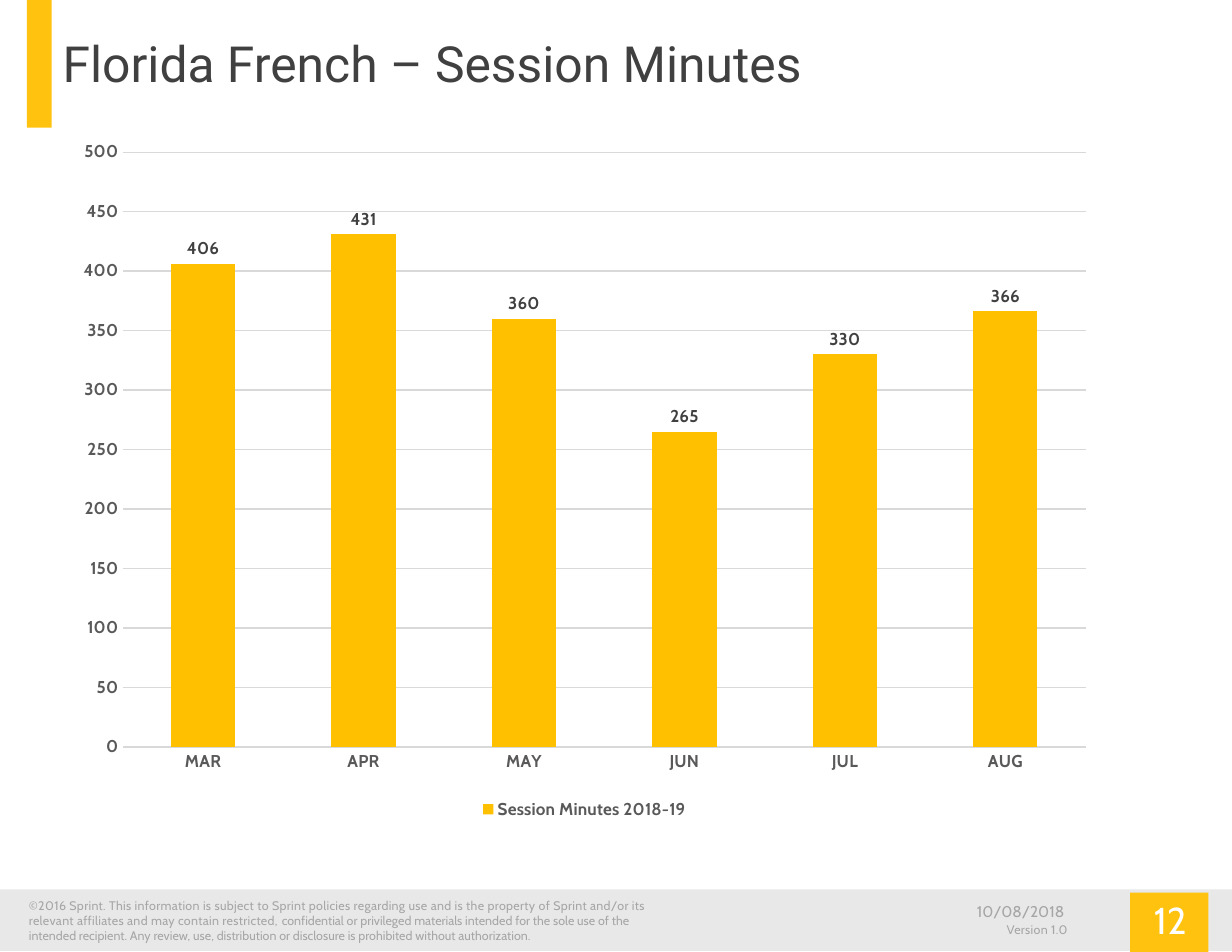
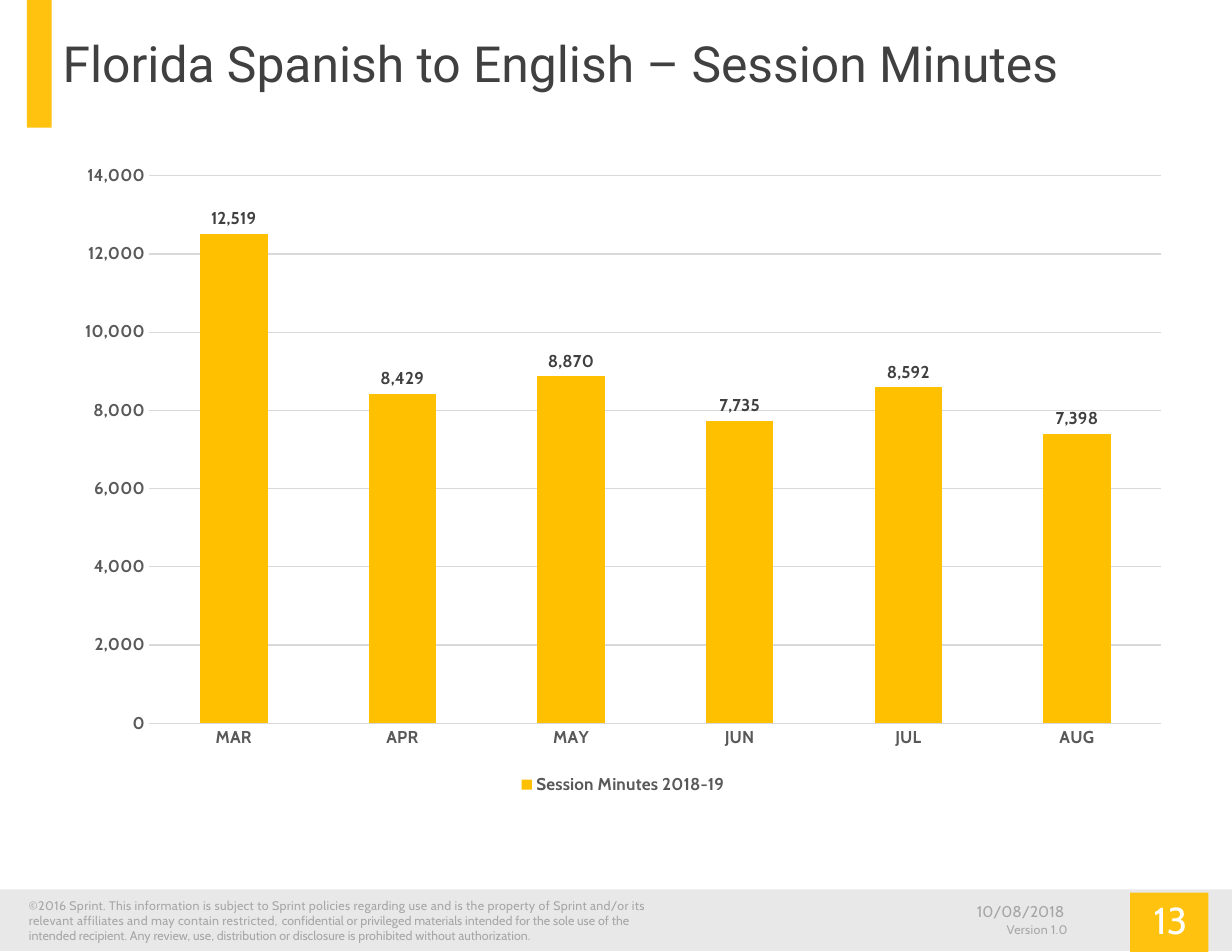
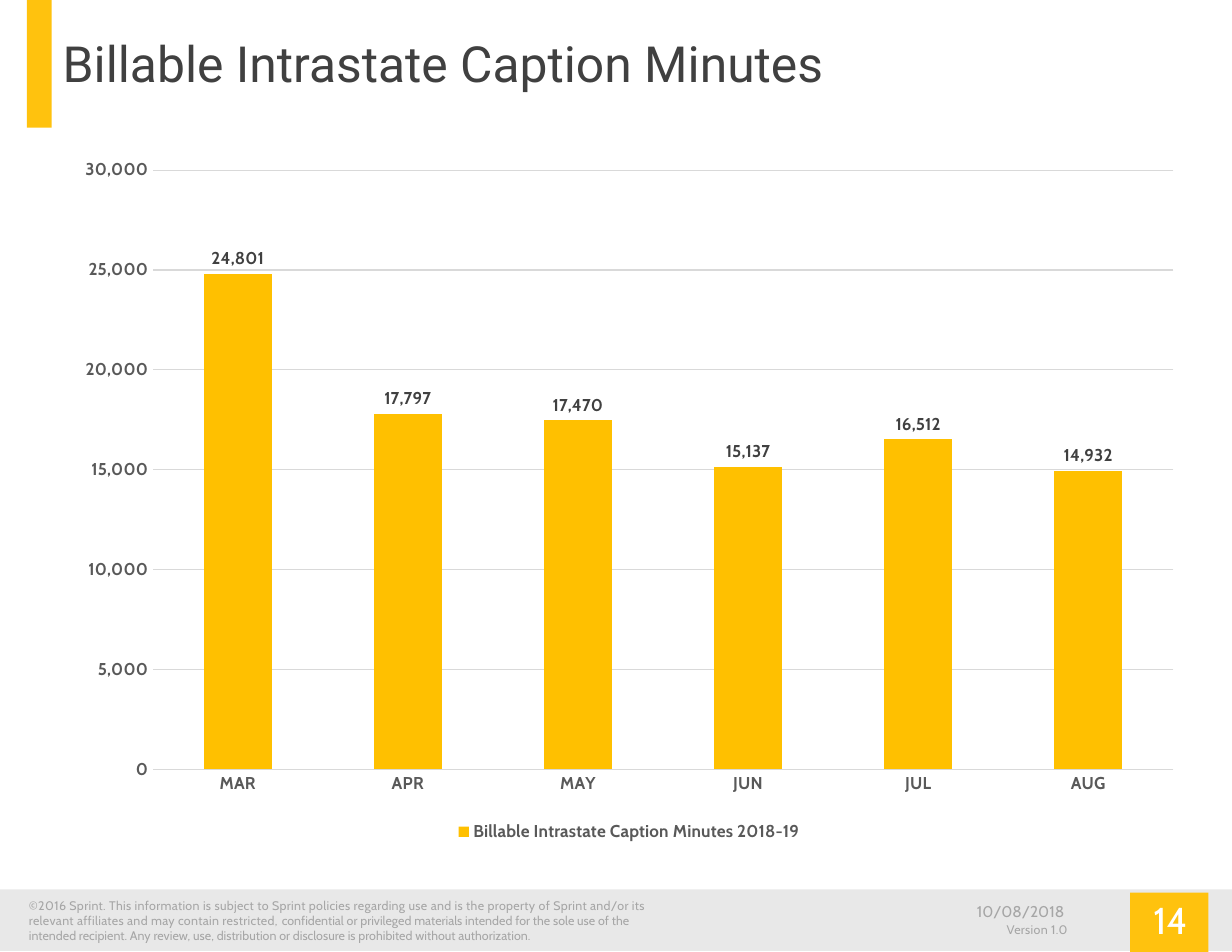
from pptx import Presentation
from pptx.chart.data import CategoryChartData
from pptx.dml.color import RGBColor
from pptx.enum.chart import XL_CHART_TYPE, XL_LABEL_POSITION, XL_LEGEND_POSITION, XL_TICK_MARK
from pptx.enum.shapes import MSO_SHAPE
from pptx.enum.text import MSO_ANCHOR, PP_ALIGN
from pptx.util import Inches, Pt

YELLOW = RGBColor(0xFF, 0xC2, 0x0E)
BAR_YELLOW = RGBColor(0xFF, 0xC0, 0x00)
BAND_GREY = RGBColor(0xE8, 0xE8, 0xE8)
FOOTER_GREY = RGBColor(0xA6, 0xA6, 0xA6)
GRID_GREY = RGBColor(0xD9, 0xD9, 0xD9)
AXIS_GREY = RGBColor(0x59, 0x59, 0x59)
DARK = RGBColor(0x40, 0x40, 0x40)
WHITE = RGBColor(0xFF, 0xFF, 0xFF)
BODY_FONT, TITLE_FONT = "Cabin", "Roboto"
NUMBER_FORMAT = "#,##0"

FIRST_PAGE = 12
MONTHS = ["MAR", "APR", "MAY", "JUN", "JUL", "AUG"]
SLIDES = [
    dict(title="Florida French – Session Minutes",
         series="Session Minutes 2018-19",
         minutes=[406, 431, 360, 265, 330, 366],
         top=500, step=50, box=(0.56, 1.14, 9.32, 6.22)),
    dict(title="Florida Spanish to English – Session Minutes",
         series="Session Minutes 2018-19",
         minutes=[12519, 8429, 8870, 7735, 8592, 7398],
         top=14000, step=2000, box=(0.56, 1.36, 10.01, 5.78)),
    dict(title="Billable Intrastate Caption Minutes",
         series="Billable Intrastate Caption Minutes 2018-19",
         minutes=[24801, 17797, 17470, 15137, 16512, 14932],
         top=30000, step=5000, box=(0.56, 1.3, 10.12, 6.26)),
]
BLOCKS = [  # box, fill
    ((0.24, 0, 0.22, 1.14), YELLOW),
    ((0, 7.94, 11, 0.55), BAND_GREY),
    ((10.09, 7.97, 0.7, 0.53), YELLOW),
]
# Each run is its text and its letter spacing in points.
NOTICE = [
    ("©2016 Sprint. This information is subject to Sprint policies regarding use and is "
     "the property of Sprint and/or its relevant affiliates and may contain restricted, ", 0.2),
    ("confidential or privileged materials intended for the sole use of the intended "
     "recipient. Any review, use, distribution or disclosure is prohibited without "
     "authorization.", 0),
]
DATE = [("10/08/2018", 0)]
VERSION = [("Version 1.0", 0.2)]
INSETS = (0.1, 0.05, 0.1, 0.05)


def style(font, size, color, name=BODY_FONT, bold=False):
    font.name, font.size, font.bold = name, Pt(size), bold
    font.color.rgb = color


def add_text(s, box, runs, size, color, name=BODY_FONT, align=PP_ALIGN.LEFT,
             anchor=MSO_ANCHOR.TOP, insets=INSETS):
    tf = s.shapes.add_textbox(*map(Inches, box)).text_frame
    tf.word_wrap = True
    tf.vertical_anchor = anchor
    tf.margin_left, tf.margin_top, tf.margin_right, tf.margin_bottom = map(Inches, insets)
    p = tf.paragraphs[0]
    p.alignment = align
    for text, spacing in runs:
        r = p.add_run()
        r.text = text
        style(r.font, size, color, name)
        if spacing:
            r._r.get_or_add_rPr().set("spc", str(round(spacing * 100)))


def add_frame(s, page):
    """Draw the title tab, the footer band and the footer texts."""
    for box, fill in BLOCKS:
        sp = s.shapes.add_shape(MSO_SHAPE.RECTANGLE, *map(Inches, box))
        sp.shadow.inherit = False
        sp.fill.solid()
        sp.fill.fore_color.rgb = fill
        sp.line.fill.background()
    add_text(s, (0.16, 7.97, 5.75, 0.64), NOTICE, 8, FOOTER_GREY)
    add_text(s, (9.76, 7.97, 1.38, 0.48), [(str(page), 0)], 24, WHITE,
             align=PP_ALIGN.CENTER, insets=(0.08, 0.04, 0.08, 0.04))
    add_text(s, (7.85, 8, 1.75, 0.27), DATE, 10, FOOTER_GREY, align=PP_ALIGN.RIGHT)
    add_text(s, (8.89, 8.18, 1.36, 0.24), VERSION, 8, FOOTER_GREY)


def add_minutes_chart(s, box, series, minutes, top, step):
    data = CategoryChartData(number_format=NUMBER_FORMAT)
    data.categories = MONTHS
    data.add_series(series, minutes)
    chart = s.shapes.add_chart(XL_CHART_TYPE.COLUMN_CLUSTERED, *map(Inches, box), data).chart
    style(chart.font, 10, RGBColor(0, 0, 0))
    chart.has_title = False
    chart.has_legend = True
    chart.legend.position = XL_LEGEND_POSITION.BOTTOM
    chart.legend.include_in_layout = False
    style(chart.legend.font, 11, AXIS_GREY, bold=True)

    for axis in (chart.category_axis, chart.value_axis):
        axis.major_tick_mark = axis.minor_tick_mark = XL_TICK_MARK.NONE
        axis.format.line.fill.background()
        style(axis.tick_labels.font, 11, AXIS_GREY, bold=True)
    values = chart.value_axis
    values.minimum_scale, values.maximum_scale, values.major_unit = 0, top, step
    values.tick_labels.number_format = NUMBER_FORMAT
    values.tick_labels.number_format_is_linked = False
    values.has_major_gridlines = True
    grid = values.major_gridlines.format.line
    grid.color.rgb, grid.width = GRID_GREY, Pt(0.75)

    plot = chart.plots[0]
    plot.gap_width = 150
    plot.vary_by_categories = False
    fill = plot.series[0].format.fill
    fill.solid()
    fill.fore_color.rgb = BAR_YELLOW
    labels = plot.series[0].data_labels
    labels.show_value = True
    labels.position = XL_LABEL_POSITION.OUTSIDE_END
    labels.number_format = NUMBER_FORMAT
    labels.number_format_is_linked = False
    style(labels.font, 11, DARK, bold=True)


def main():
    prs = Presentation()
    prs.slide_width, prs.slide_height = Inches(11), Inches(8.5)
    for page, item in enumerate(SLIDES, FIRST_PAGE):
        s = prs.slides.add_slide(prs.slide_layouts[6])
        add_frame(s, page)
        add_text(s, (0.56, 0.1, 9.34, 0.92), [(item["title"], 0)], 32, DARK, TITLE_FONT,
                 anchor=MSO_ANCHOR.MIDDLE, insets=(0, 0, 0, 0))
        add_minutes_chart(s, item["box"], item["series"], item["minutes"],
                          item["top"], item["step"])
    prs.save("out.pptx")


if __name__ == "__main__":
    main()
